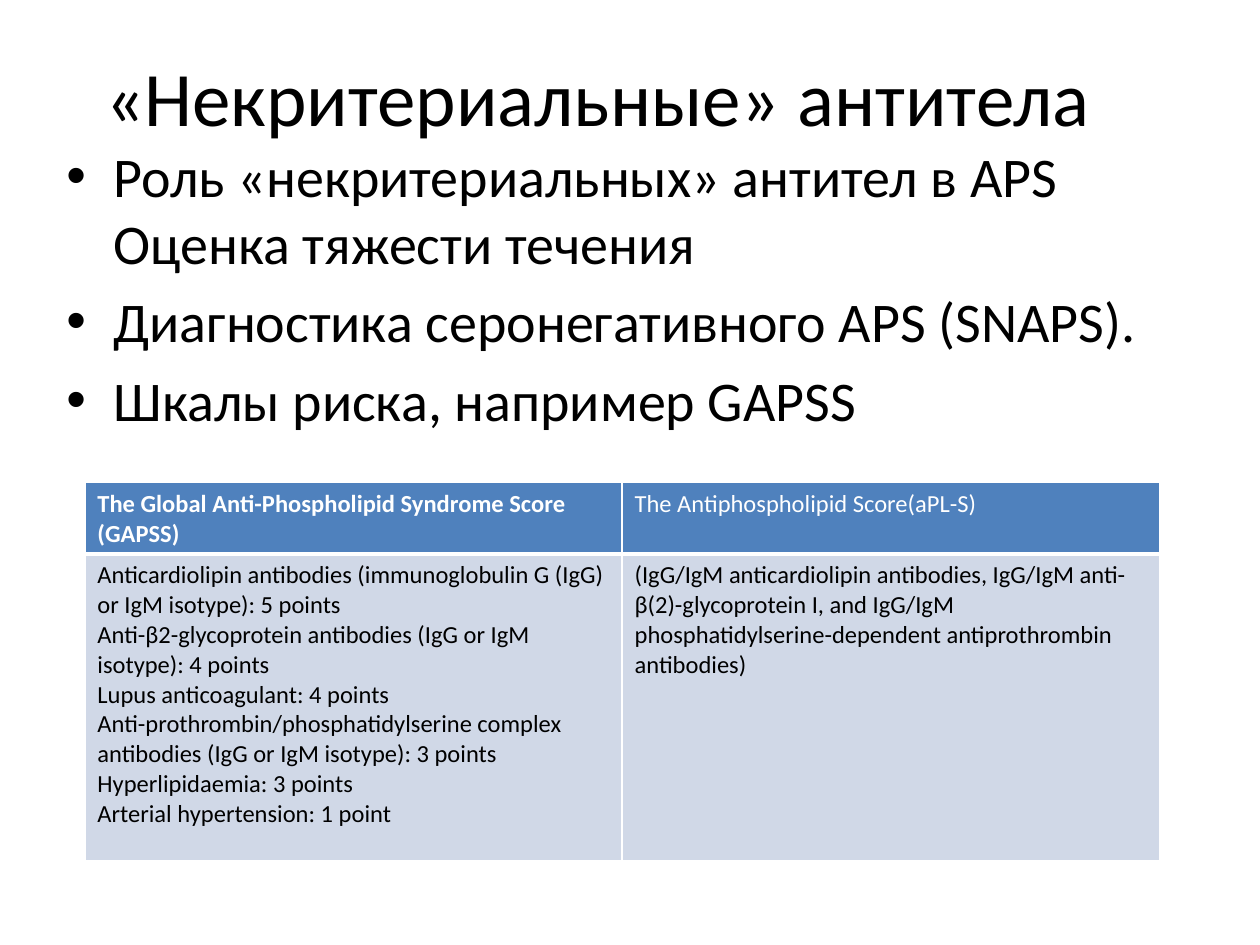
"""Build a slide on non-criteria antibodies with a table of risk scores."""
from lxml import etree
from pptx import Presentation
from pptx import util as u
from pptx.dml import color
from pptx.enum import text
from pptx.oxml import ns

FONT = "Calibri"
BLACK, WHITE, BLUE, PALE = "000000", "FFFFFF", "4F81BD", "D0D8E7"
THIN, THICK = 0.96, 3
TITLE = "«Некритериальные» антитела"
TOPICS = [
    "Роль «некритериальных» антител в APS Оценка тяжести течения",
    "Диагностика серонегативного APS (SNAPS).",
    "Шкалы риска, например GAPSS",
]
HEADINGS = [
    "The Global Anti-Phospholipid Syndrome Score (GAPSS)",
    "The Antiphospholipid Score(aPL-S)",
]
GAPSS_ITEMS = [
    "Anticardiolipin antibodies (immunoglobulin G (IgG) or IgM isotype): 5 points",
    "Anti-β2-glycoprotein antibodies (IgG or IgM isotype): 4 points",
    "Lupus anticoagulant: 4 points",
    "Anti-prothrombin/phosphatidylserine complex antibodies (IgG or IgM isotype): 3 points",
    "Hyperlipidaemia: 3 points",
    "Arterial hypertension: 1 point",
]
APLS_ITEMS = [
    "(IgG/IgM anticardiolipin antibodies, IgG/IgM anti-β(2)-glycoprotein I, "
    "and IgG/IgM phosphatidylserine-dependent antiprothrombin antibodies)",
]


def rgb(value):
    """Turn a hex string into a colour."""
    return color.RGBColor.from_string(value)


def add_bullet(para):
    """Give a paragraph a hanging round bullet."""
    props = para._p.get_or_add_pPr()
    props.set("marL", str(u.Cm(0.95)))
    props.set("indent", str(-u.Cm(0.95)))
    etree.SubElement(props, ns.qn("a:buFont")).set("typeface", "Arial")
    etree.SubElement(props, ns.qn("a:buChar")).set("char", "•")


def write(frame, lines, size, fill=BLACK, bold=False, align=text.PP_ALIGN.LEFT,
          before=0, bullet=False):
    """Write each line as one formatted paragraph."""
    for index, line in enumerate(lines):
        para = frame.add_paragraph() if index else frame.paragraphs[0]
        para.alignment = align
        para.space_before = u.Pt(before)
        if bullet:
            add_bullet(para)
        span = para.add_run()
        span.text = line
        span.font.name = FONT
        span.font.size = u.Pt(size)
        span.font.bold = bold
        span.font.color.rgb = rgb(fill)


def add_text(page, left, top, width, height, lines, anchor=text.MSO_ANCHOR.TOP, **style):
    """Add a wrapping text box and return its frame."""
    box = page.shapes.add_textbox(u.Cm(left), u.Cm(top), u.Cm(width), u.Cm(height))
    frame = box.text_frame
    frame.word_wrap = True
    frame.vertical_anchor = anchor
    write(frame, lines, **style)
    return frame


def set_borders(cell, top, bottom):
    """Draw white borders, thin at the sides."""
    props = cell._tc.get_or_add_tcPr()
    for side, width in zip("LRTB", (THIN, THIN, top, bottom)):
        line = etree.SubElement(props, ns.qn(f"a:ln{side}"), w=str(u.Pt(width)))
        solid = etree.SubElement(line, ns.qn("a:solidFill"))
        etree.SubElement(solid, ns.qn("a:srgbClr"), val=WHITE)


def fill_cell(cell, lines, back, top, bottom, **style):
    """Set the text, borders and fill of a cell."""
    write(cell.text_frame, lines, 14, **style)
    set_borders(cell, top, bottom)
    cell.fill.solid()
    cell.fill.fore_color.rgb = rgb(back)


def add_scores(page):
    """Add the table that compares the two scores."""
    heights = (1.41, 6.18)
    table = page.shapes.add_table(
        2, 2, u.Cm(1.71), u.Cm(9.73), u.Cm(21.66), u.Cm(sum(heights))).table
    for row, height in zip(table.rows, heights):
        row.height = u.Cm(height)
    for column, items in enumerate((GAPSS_ITEMS, APLS_ITEMS)):
        fill_cell(table.cell(0, column), [HEADINGS[column]], BLUE, THIN, THICK,
                  fill=WHITE, bold=column == 0)
        fill_cell(table.cell(1, column), items, PALE, THICK, THIN)


def main():
    """Build and save the deck."""
    deck = Presentation()
    deck.slide_width, deck.slide_height = u.Cm(25.4), u.Cm(19.05)
    page = deck.slides.add_slide(deck.slide_layouts[6])
    title = add_text(page, 1.27, 0.74, 22.02, 2.39, [TITLE], size=44,
                     anchor=text.MSO_ANCHOR.MIDDLE, align=text.PP_ALIGN.CENTER)
    title.margin_right = u.Cm(0.7)
    add_text(page, 1.09, 2.72, 23.39, 10.21, TOPICS, size=32, before=6.4, bullet=True)
    add_scores(page)
    deck.save("out.pptx")


if __name__ == "__main__":
    main()
